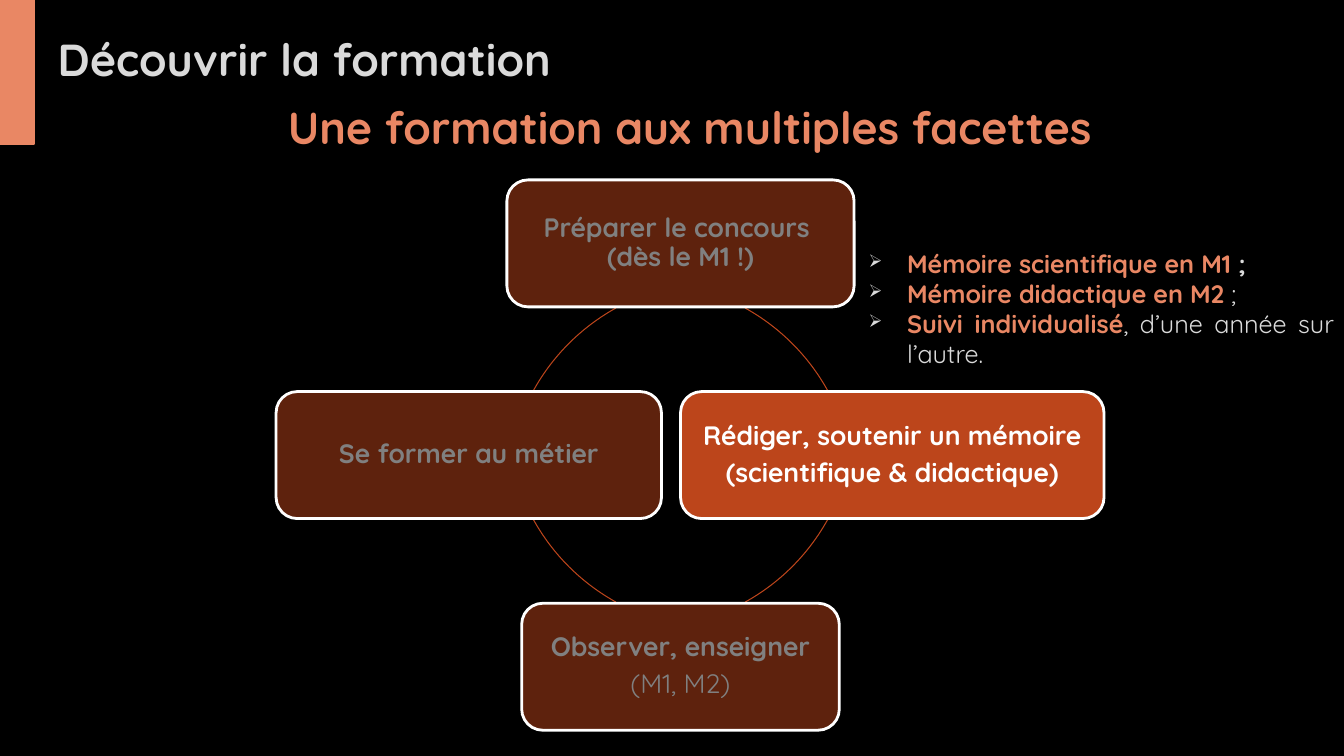
import pptx
import pptx.util
import pptx.dml.color
import pptx.enum.shapes
import pptx.enum.text
import pptx.oxml
import pptx.oxml.ns

Inches, Pt = pptx.util.Inches, pptx.util.Pt
Shape = pptx.enum.shapes.MSO_SHAPE
Align = pptx.enum.text.PP_ALIGN
Anchor = pptx.enum.text.MSO_ANCHOR

WIDE, HIGH = Inches(13.33), Inches(7.5)
FONT = "Quicksand"
HUES = {
    "back": "000000", "coral": "E98764", "rust": "BC451B", "dark": "5E220D",
    "white": "FFFFFF", "grey": "808080", "pale": "DADADA",
}


def hue(name):
    return pptx.dml.color.RGBColor.from_string(HUES[name])


def share(left, top, width, height):
    return [int(part * full / 100) for part, full in
            zip((left, top, width, height), (WIDE, HIGH, WIDE, HIGH))]


def style(font, size, color, bold=True):
    font.name, font.size, font.bold = FONT, Pt(size), bold
    font.color.rgb = hue(color)


def draw(slide, kind, box, fill, line, width):
    shape = slide.shapes.add_shape(kind, *box)
    shape.shadow.inherit = False
    if fill:
        shape.fill.solid()
        shape.fill.fore_color.rgb = hue(fill)
    else:
        shape.fill.background()
    shape.line.color.rgb = hue(line)
    shape.line.width = Pt(width)
    return shape


def add_text(slide, box, anchor=Anchor.TOP):
    frame = slide.shapes.add_textbox(*box).text_frame
    frame.word_wrap = True
    frame.vertical_anchor = anchor
    return frame


def add_head(slide, box, text, color, align):
    para = add_text(slide, box, Anchor.MIDDLE).paragraphs[0]
    para.text, para.alignment = text, align
    style(para.font, 32, color)


def add_node(slide, box, lines, active):
    shape = draw(slide, Shape.ROUNDED_RECTANGLE, box,
                 "rust" if active else "dark", "white", 2)
    frame = shape.text_frame
    frame.word_wrap = True
    frame.vertical_anchor = Anchor.MIDDLE
    frame.margin_left = frame.margin_right = Inches(0.14)
    for row, (text, bold) in enumerate(lines):
        para = frame.add_paragraph() if row else frame.paragraphs[0]
        para.text, para.alignment = text, Align.CENTER
        para.line_spacing, para.space_after = 0.9, Pt(6)
        style(para.font, 19, "white" if active else "grey", bold)


def add_cycle(slide, box, nodes):
    left, top, width, height = box
    for turn in range(4):
        east = 1 if turn in (0, 3) else -1
        south = 1 if turn < 2 else -1
        place = (left - int(east * 0.09 * width),
                 top - int(south * 0.09 * height), width, height)
        arc = draw(slide, Shape.ARC, place, None, "rust", 0.75)
        for end, angle in enumerate((29, 61)):
            arc.adjustments[end] = (90 * turn + angle) * 0.6
    for across, down, span, lines, active in nodes:
        wide, tall = int(span * width), int(0.3 * height)
        place = (left + int(across * width) - wide // 2,
                 top + int(down * height) - tall // 2, wide, tall)
        add_node(slide, place, lines, active)


def add_list(slide, box, items):
    frame = add_text(slide, box)
    for row, runs in enumerate(items):
        para = frame.add_paragraph() if row else frame.paragraphs[0]
        para.alignment = Align.JUSTIFY
        props = para._p.get_or_add_pPr()
        props.set("marL", str(Inches(0.38)))
        props.set("indent", str(-Inches(0.38)))
        space = pptx.oxml.ns.nsdecls("a")
        for mark in (f'<a:buClr {space}><a:srgbClr val="{HUES["pale"]}"/></a:buClr>',
                     f'<a:buSzPct {space} val="70000"/>',
                     f'<a:buChar {space} char="➢"/>'):
            props.append(pptx.oxml.parse_xml(mark))
        for text, color, bold in runs:
            run = para.add_run()
            run.text = text
            style(run.font, 18, color, bold)


def main():
    deck = pptx.Presentation()
    deck.slide_width, deck.slide_height = WIDE, HIGH
    slide = deck.slides.add_slide(deck.slide_layouts[6])
    slide.background.fill.solid()
    slide.background.fill.fore_color.rgb = hue("back")

    draw(slide, Shape.RECTANGLE, share(0, 0, 2.55, 19.07), "coral", "coral", 1.25)
    add_head(slide, share(3.55, 0.25, 84, 14.93), "Découvrir la formation",
             "pale", Align.LEFT)
    add_head(slide, share(15.9, 6, 70.89, 21.6),
             "Une formation aux multiples facettes", "coral", Align.CENTER)
    add_cycle(slide, share(34.88, 32.2, 31.51, 56), [
        (0.5, 0, 0.82, [("Préparer le concours \v(dès le M1 !)", True)], False),
        (1, 0.5, 1, [("Rédiger, soutenir un mémoire", True),
                     ("(scientifique & didactique)", True)], True),
        (0.5, 1, 0.75, [("Observer, enseigner", True), ("(M1, M2)", False)], False),
        (0, 0.5, 0.91, [("Se former au métier", True)], False),
    ])
    add_list(slide, share(63.9, 32.13, 36.1, 28), [
        [("Mémoire scientifique en M1", "coral", True), (" ;", "pale", True)],
        [("Mémoire didactique en M2", "coral", True), (" ;", "pale", False)],
        [("Suivi individualisé", "coral", True),
         (", d’une année sur l’autre.", "pale", False)],
    ])
    deck.save("out.pptx")


if __name__ == "__main__":
    main()
